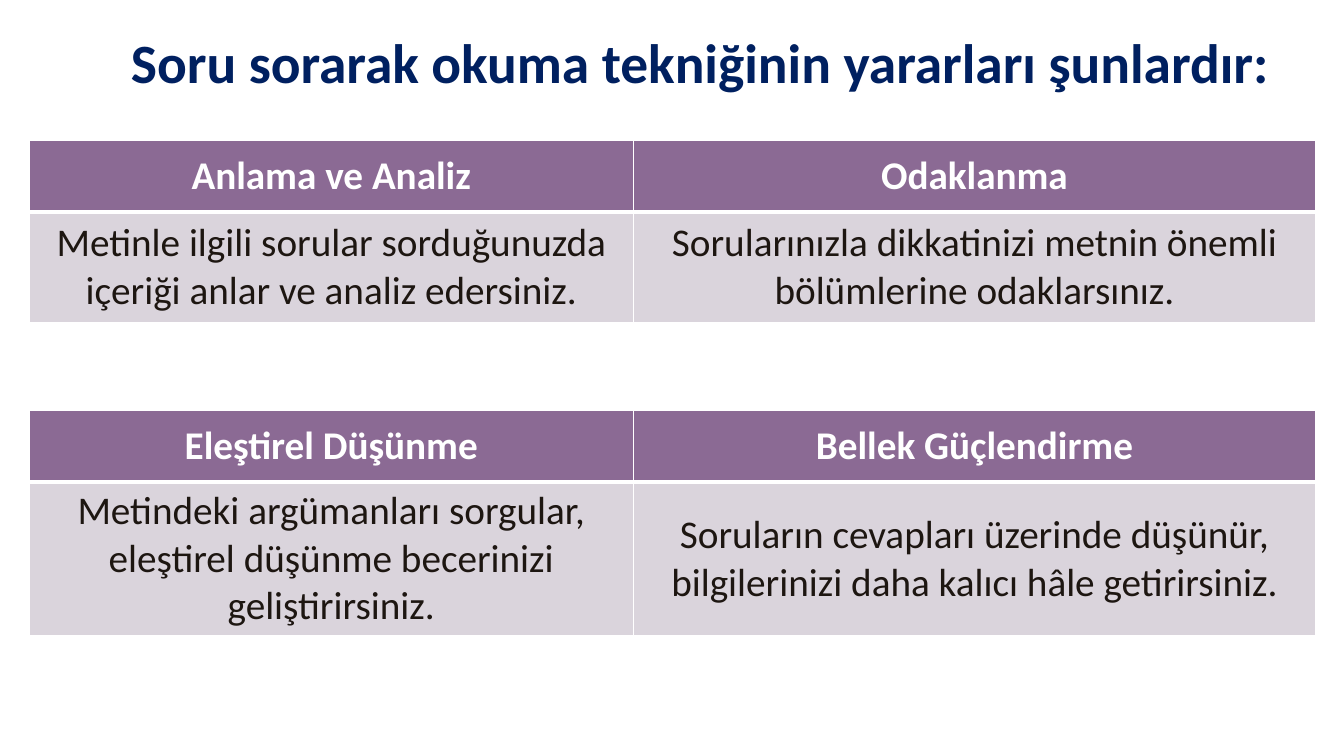
from lxml import etree
from pptx import Presentation
from pptx import util as u
from pptx.dml.color import RGBColor
from pptx.enum import text
from pptx.oxml import ns

NAVY = RGBColor(0x00, 0x20, 0x60)
PURPLE = RGBColor(0x8B, 0x6A, 0x94)
LILAC = RGBColor(0xDA, 0xD4, 0xDC)
WHITE = RGBColor(0xFF, 0xFF, 0xFF)
DARK = RGBColor(0x1D, 0x16, 0x11)

WIDTH, HEIGHT = u.Inches(13.33), u.Inches(7.5)
TABLE_LEFT = 0.29 / 13.33
COLUMNS = (5.99 / 13.33, 6.77 / 13.33)
HEADER_HEIGHT = 0.71 / 7.5

BENEFITS = (
    (1.39 / 7.5, 1.1 / 7.5, (
        ("Anlama ve Analiz",
         "Metinle ilgili sorular sorduğunuzda içeriği anlar ve analiz edersiniz."),
        ("Odaklanma",
         "Sorularınızla dikkatinizi metnin önemli bölümlerine odaklarsınız."))),
    (4.07 / 7.5, 1.5 / 7.5, (
        ("Eleştirel Düşünme",
         "Metindeki argümanları sorgular, eleştirel düşünme becerinizi geliştirirsiniz."),
        ("Bellek Güçlendirme",
         "Soruların cevapları üzerinde düşünür, bilgilerinizi daha kalıcı hâle getirirsiniz."))),
)


def across(share):
    return round(WIDTH * share)


def down(share):
    return round(HEIGHT * share)


def format_paragraph(para, size, color, bold):
    para.alignment = text.PP_ALIGN.CENTER
    for span in para.runs:
        span.font.name = "Calibri"
        span.font.size = u.Pt(size)
        span.font.bold = bold
        span.font.color.rgb = color


def add_title(page, wording):
    title = page.shapes.title
    title.left, title.top = across(1 / 13.33), down(0.36 / 7.5)
    title.width, title.height = across(11.89 / 13.33), down(0.65 / 7.5)
    frame = title.text_frame
    frame.text = wording
    frame.word_wrap = True
    frame.auto_size = text.MSO_AUTO_SIZE.NONE
    frame.vertical_anchor = text.MSO_ANCHOR.BOTTOM
    frame.margin_left = frame.margin_right = u.Inches(0.13)
    frame.margin_top = frame.margin_bottom = u.Inches(0.07)
    frame.paragraphs[0].line_spacing = 0.85
    format_paragraph(frame.paragraphs[0], 39.6, NAVY, True)


def set_borders(cell, widths):
    properties = cell._tc.get_or_add_tcPr()
    for index, (side, width) in enumerate(widths.items()):
        line = etree.Element(ns.qn(f"a:ln{side}"), w=str(u.Pt(width)))
        fill = etree.SubElement(line, ns.qn("a:solidFill"))
        etree.SubElement(fill, ns.qn("a:srgbClr"), val=str(WHITE))
        properties.insert(index, line)


def fill_cell(cell, wording, is_header):
    cell.text = wording
    cell.vertical_anchor = text.MSO_ANCHOR.MIDDLE
    cell.fill.solid()
    cell.fill.fore_color.rgb = PURPLE if is_header else LILAC
    format_paragraph(cell.text_frame.paragraphs[0], 28,
                     WHITE if is_header else DARK, is_header)
    set_borders(cell, {"L": 1, "R": 1, "T": 1 if is_header else 3,
                       "B": 3 if is_header else 1})


def add_benefits(page, top, body_height, benefits):
    heights = (HEADER_HEIGHT, body_height)
    table = page.shapes.add_table(
        len(heights), len(COLUMNS), across(TABLE_LEFT), down(top),
        across(sum(COLUMNS)), down(sum(heights))).table
    for row, height in zip(table.rows, heights):
        row.height = down(height)
    for column, width in enumerate(COLUMNS):
        table.columns[column].width = across(width)
        for row, wording in enumerate(benefits[column]):
            fill_cell(table.cell(row, column), wording, row == 0)


def main():
    deck = Presentation()
    deck.slide_width, deck.slide_height = WIDTH, HEIGHT
    page = deck.slides.add_slide(deck.slide_layouts[5])
    page.background.fill.solid()
    page.background.fill.fore_color.rgb = WHITE
    add_title(page, "Soru sorarak okuma tekniğinin yararları şunlardır:")
    for top, body_height, benefits in BENEFITS:
        add_benefits(page, top, body_height, benefits)
    deck.save("out.pptx")


if __name__ == "__main__":
    main()
